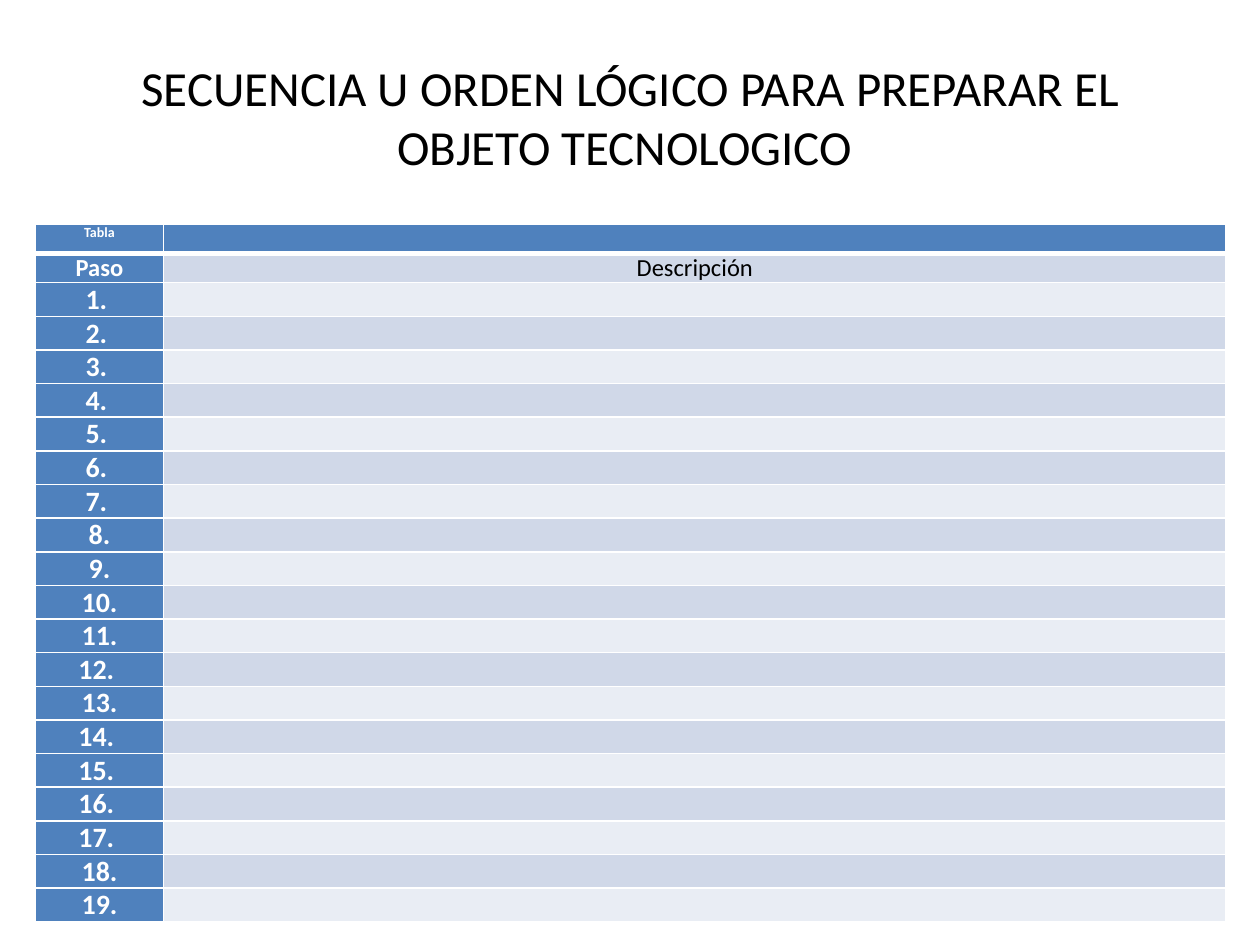
from lxml import etree
from pptx import Presentation
from pptx.dml.color import RGBColor
from pptx.enum.text import MSO_ANCHOR, PP_ALIGN
from pptx.oxml.ns import qn
from pptx.util import Inches, Pt

CENTER, MIDDLE, TOP = PP_ALIGN.CENTER, MSO_ANCHOR.MIDDLE, MSO_ANCHOR.TOP
WHITE, BLACK, BLUE = "FFFFFF", "000000", "4F81BD"
BANDS = ["D0D8E8", "E9EDF4"]
INSETS = {"margin_left": Inches(0.07), "margin_right": Inches(0.07),
          "margin_top": 0, "margin_bottom": 0, "vertical_anchor": TOP}


def write(par, text, size, color, bold=False):
    par.alignment = CENTER
    run = par.add_run()
    run.text = text
    look = {"name": "Calibri", "size": Pt(size), "bold": bold}
    for key, value in look.items():
        setattr(run.font, key, value)
    run.font.color.rgb = RGBColor.from_string(color)


def border(cell, bottom):
    props = cell._tc.get_or_add_tcPr()
    widths = {"lnL": 1, "lnR": 1, "lnT": 1, "lnB": bottom}
    for spot, (tag, width) in enumerate(widths.items()):
        line = etree.Element(qn(f"a:{tag}"), w=str(Pt(width)))
        fill = etree.SubElement(line, qn("a:solidFill"))
        etree.SubElement(fill, qn("a:srgbClr"), val=WHITE)
        props.insert(spot, line)


deck = Presentation()
deck.slide_width, deck.slide_height = Inches(10), Inches(7.5)
slide = deck.slides.add_slide(deck.slide_layouts[6])

# Title
box = slide.shapes.add_textbox(Inches(0.5), Inches(0.3), Inches(9), Inches(1.25))
frame = box.text_frame
frame.word_wrap = True
frame.vertical_anchor = MIDDLE
write(frame.paragraphs[0],
      "SECUENCIA U ORDEN LÓGICO PARA PREPARAR EL OBJETO TECNOLOGICO ", 28, BLACK)

# Row texts and sizes; most step numbers end in a no-break space
tight = {8, 9, 10, 11, 13, 18, 19}
rows = [("Tabla", "", 8), ("Paso", "Descripción", 14)]
rows += [(f"{n}." if n in tight else f"{n}. ", "", 16) for n in range(1, 20)]

# Table of steps
holder = slide.shapes.add_table(len(rows), 2, Inches(0.28), Inches(1.78),
                                Inches(9.45), Inches(5.53))
table = holder.table
for col, width in zip(table.columns, (1.02, 8.43)):
    col.width = Inches(width)

for i, (step, note, size) in enumerate(rows):
    table.rows[i].height = Inches(0.23)
    for j, text in enumerate((step, note)):
        cell = table.cell(i, j)
        for key, value in INSETS.items():
            setattr(cell, key, value)
        head = i == 0 or j == 0
        cell.fill.solid()
        cell.fill.fore_color.rgb = RGBColor.from_string(
            BLUE if head else BANDS[(i - 1) % 2])
        border(cell, 3 if i == 0 else 1)
        par = cell.text_frame.paragraphs[0]
        if text:
            write(par, text, size, WHITE if head else BLACK, head)
        else:
            # Small type keeps an empty cell from stretching its row
            etree.SubElement(par._p, qn("a:endParaRPr"), sz="800")
holder.height = Inches(5.53)

deck.save("out.pptx")
